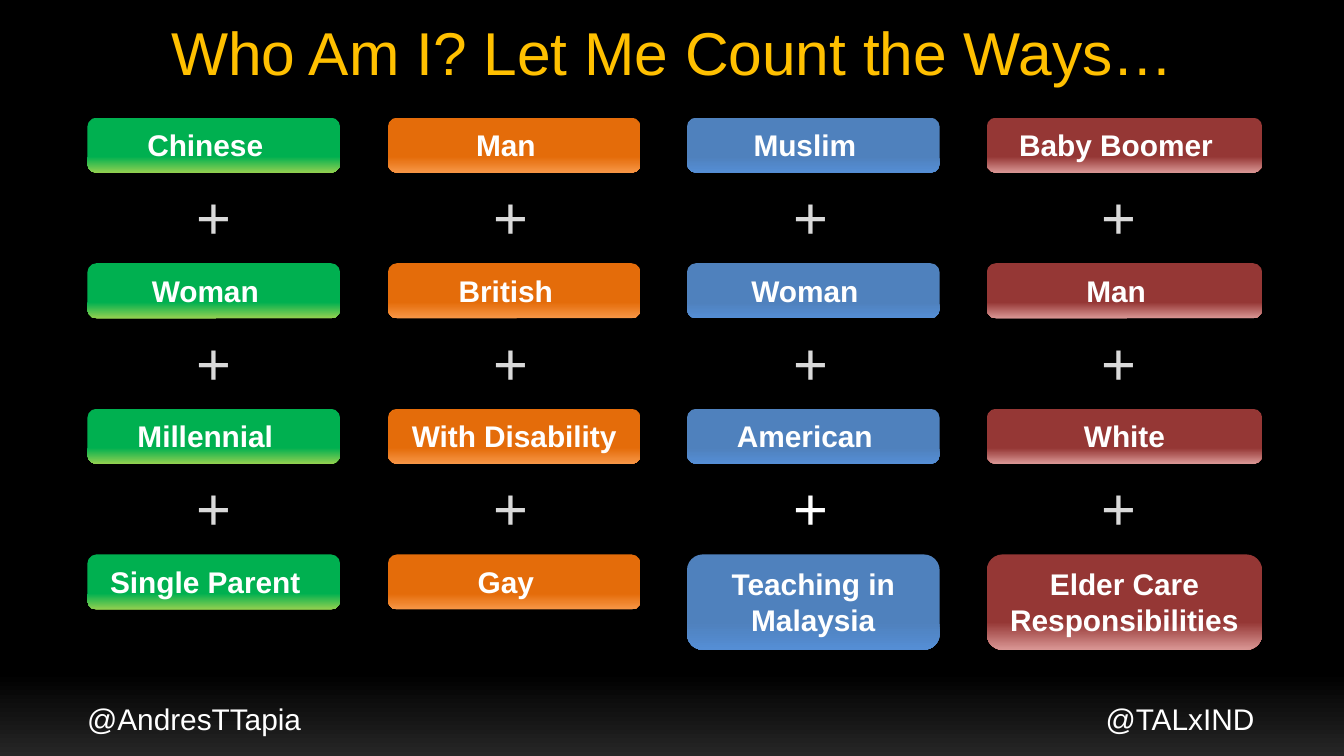
from dataclasses import dataclass
from pptx import Presentation
from pptx.dml.color import RGBColor
from pptx.enum.shapes import MSO_SHAPE
from pptx.enum.text import MSO_ANCHOR, MSO_AUTO_SIZE, PP_ALIGN
from pptx.util import Pt

ROUND = MSO_SHAPE.ROUNDED_RECTANGLE
TOP, MIDDLE = MSO_ANCHOR.TOP, MSO_ANCHOR.MIDDLE
FIXED, GROW = MSO_AUTO_SIZE.NONE, MSO_AUTO_SIZE.SHAPE_TO_FIT_TEXT
LEFT, CENTER = PP_ALIGN.LEFT, PP_ALIGN.CENTER

HUES = {
    "black": "000000", "dark": "262626", "white": "FFFFFF",
    "gray": "D9D9D9", "gold": "FFC000",
    "green": "00B050", "lime": "92D050",
    "orange": "E46C0A", "peach": "F79646",
    "blue": "4F81BD", "sky": "558ED5",
    "red": "953735", "rose": "D99694",
}
FACE = "Arial"
FIRST, STEP = 63, 78
LOW, HIGH = 29.5, 51.1
INSET, NUDGE = 7.2, 8.9


@dataclass
class Label:
    text: str
    nudge: float = NUDGE
    height: float = LOW


@dataclass
class Column:
    left: float
    width: float
    plus: float
    base: str
    glow: str
    labels: list[Label]


COLUMNS = [
    Column(46.8, 135.4, 98.2, "green", "lime", [
        Label("Chinese"), Label("Woman"),
        Label("Millennial"), Label("Single Parent")]),
    Column(207.8, 135.4, 257.5, "orange", "peach", [
        Label("Man"), Label("British"),
        Label("With Disability", 0), Label("Gay")]),
    Column(368, 135.4, 418, "blue", "sky", [
        Label("Muslim"), Label("Woman"), Label("American"),
        Label("Teaching in Malaysia", 0, HIGH)]),
    Column(528.6, 147.6, 583, "red", "rose", [
        Label("Baby Boomer"), Label("Man"), Label("White", 0),
        Label("Elder Care Responsibilities", 0, HIGH)]),
]


def shade(fill, base: str, glow: str, start: float) -> None:
    fill.gradient()
    fill.gradient_angle = 270
    for stop, hue, place in zip(fill.gradient_stops, (base, glow), (start, 1)):
        stop.color.rgb = RGBColor.from_string(HUES[hue])
        stop.position = place


def write(frame, text: str, size: float, hue: str, align=LEFT, bold: bool = False) -> None:
    frame.text = text
    para = frame.paragraphs[0]
    para.alignment = align
    font = para.font
    font.name, font.size, font.bold = FACE, Pt(size), bold
    font.color.rgb = RGBColor.from_string(HUES[hue])


def note(slide, left: float, top: float, width: float, height: float,
         text: str, size: float, hue: str) -> None:
    box = slide.shapes.add_textbox(Pt(left), Pt(top), Pt(width), Pt(height))
    frame = box.text_frame
    frame.word_wrap = False
    frame.auto_size = GROW
    write(frame, text, size, hue)


def pill(slide, col: Column, top: float, label: Label) -> None:
    shape = slide.shapes.add_shape(
        ROUND, Pt(col.left), Pt(top), Pt(col.width), Pt(label.height))
    shape.shadow.inherit = False
    shape.line.fill.background()
    shade(shape.fill, col.base, col.glow, 0.71)
    frame = shape.text_frame
    frame.word_wrap = True
    frame.auto_size = GROW
    frame.vertical_anchor = TOP
    frame.margin_right = Pt(INSET + label.nudge)
    write(frame, label.text, 16, "white", CENTER, True)


def head(slide, text: str) -> None:
    title = slide.shapes.title
    title.left, title.top = Pt(18), Pt(4.3)
    title.width, title.height = Pt(684.7), Pt(46)
    frame = title.text_frame
    frame.auto_size = FIXED
    frame.vertical_anchor = MIDDLE
    write(frame, text, 32.4, "gold", CENTER)


def main() -> None:
    deck = Presentation()
    deck.slide_width, deck.slide_height = Pt(720), Pt(405)
    slide = deck.slides.add_slide(deck.slide_layouts[5])
    shade(slide.background.fill, "black", "dark", 0.89)
    head(slide, "Who Am I? Let Me Count the Ways…")
    for col in COLUMNS:
        last = len(col.labels) - 1
        for row, label in enumerate(col.labels):
            top = FIRST + row * STEP
            pill(slide, col, top, label)
            if row < last:
                bright = col.base == "blue" and row == last - 1
                hue = "white" if bright else "gray"
                note(slide, col.plus, top + 29.8, 33.1, 46, "+", 32, hue)
    note(slide, 39.6, 371.9, 130.3, 26.6, "@AndresTTapia", 16, "white")
    note(slide, 585.2, 371.9, 98.6, 26.6, "@TALxIND", 16, "white")
    deck.save("out.pptx")


if __name__ == "__main__":
    main()
